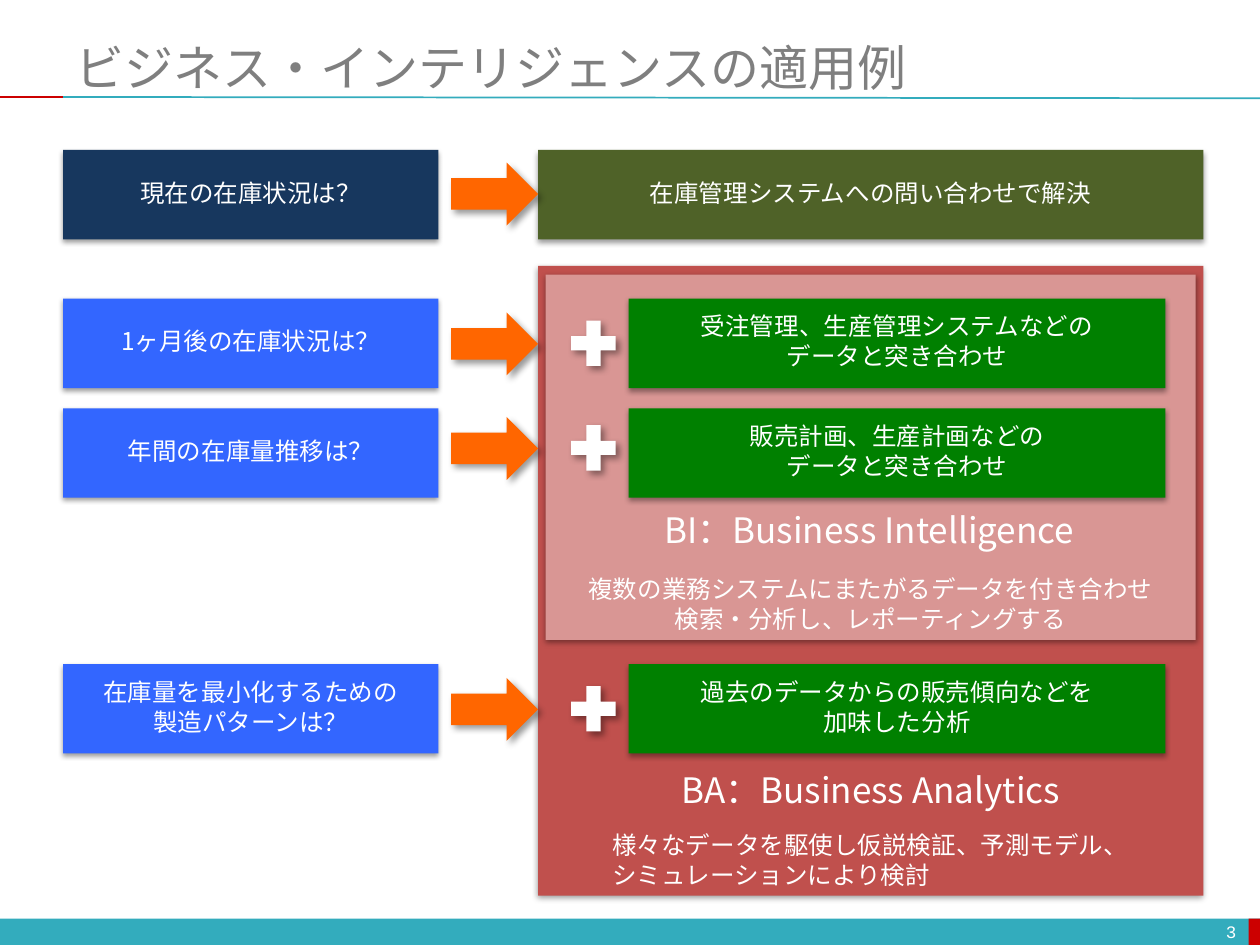
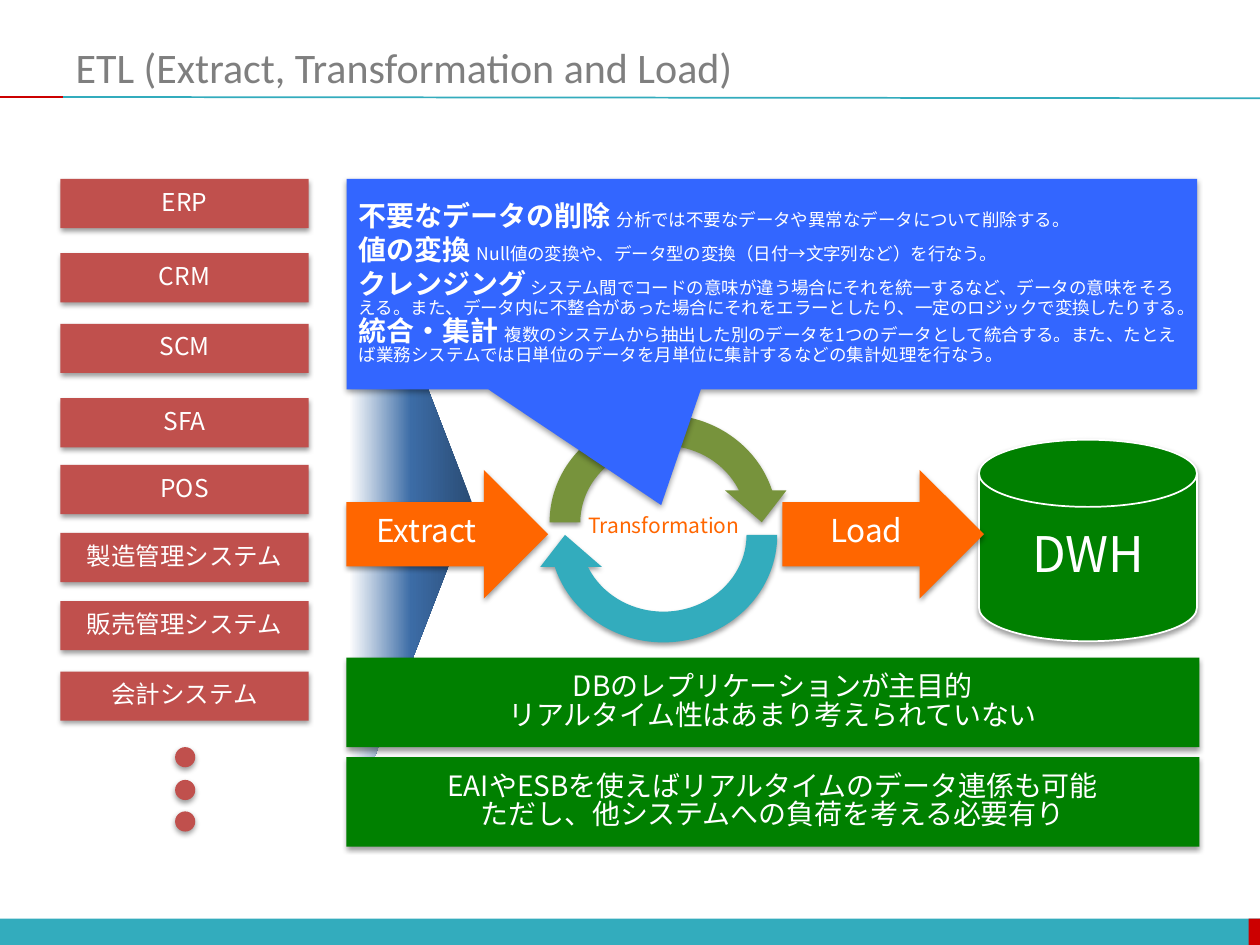
from copy import deepcopy
from dataclasses import dataclass
from lxml import etree
from pptx import Presentation
from pptx import util as u
from pptx.dml.color import RGBColor
from pptx.enum import shapes as s, text as t
from pptx.oxml.ns import qn


@dataclass(frozen=True)
class Theme:
    teal: str = "33ACBD"
    signal: str = "CC0000"
    title: str = "7F7F7F"
    white: str = "FFFFFF"
    navy: str = "17375E"
    blue: str = "3366FF"
    olive: str = "4F6228"
    moss: str = "77933C"
    green: str = "008000"
    red: str = "C0504D"
    pink: str = "D99694"
    orange: str = "FF6600"
    funnel: tuple = ("2A4C75", "3C6CA6", "FFFFFF")
    body_font: str = "Noto Sans CJK JP"
    title_font: str = "Calibri"
    number_font: str = "Courier New"
    number: int = 10
    detail: int = 10
    small: int = 12
    body: int = 14
    lead: int = 16
    step: int = 18
    term: int = 20
    large: int = 28
    soft: tuple = (38, 3.1, 1.6, 90)
    deep: tuple = (40, 4, 3, 45)


theme = Theme()
center, left, right = t.PP_ALIGN.CENTER, t.PP_ALIGN.LEFT, t.PP_ALIGN.RIGHT
middle, bottom, top = t.MSO_ANCHOR.MIDDLE, t.MSO_ANCHOR.BOTTOM, t.MSO_ANCHOR.TOP
shape = s.MSO_SHAPE


def write(frame, lines, size=theme.body, color=theme.white, font=theme.body_font,
          align=center, anchor=middle, gaps=None, wrap=True, spacing=0.85):
    frame.word_wrap = wrap
    frame.vertical_anchor = anchor
    for index, line in enumerate(lines):
        paragraph = frame.paragraphs[0] if index == 0 else frame.add_paragraph()
        gap = gaps[index] if gaps else 0.2 * size
        layout = {"alignment": align, "line_spacing": spacing,
                  "space_before": u.Pt(gap if index else 0)}
        for key, value in layout.items():
            setattr(paragraph, key, value)
        for words, look in [(line, {})] if isinstance(line, str) else line:
            run = paragraph.add_run()
            run.text = words
            for key, value in {"name": font, "size": u.Pt(size), **look}.items():
                setattr(run.font, key, value)
            run.font.color.rgb = RGBColor.from_string(color)
            east_asian = etree.SubElement(run.font._element, qn("a:ea"))
            east_asian.set("typeface", theme.body_font)


def draw(slide, kind, box, fill, lines=(), shadow=theme.soft, **look):
    part = slide.shapes.add_shape(kind, *map(u.Inches, box))
    part.fill.solid()
    part.fill.fore_color.rgb = RGBColor.from_string(fill)
    part.line.fill.background()
    part.shadow.inherit = False
    if shadow:
        alpha, blur, distance, angle = shadow
        effects = part._element.spPr.find(qn("a:effectLst"))
        outer = etree.SubElement(effects, qn("a:outerShdw"), blurRad=str(u.Pt(blur)),
                                 dist=str(u.Pt(distance)), dir=str(angle * 60000),
                                 rotWithShape="0")
        black = etree.SubElement(outer, qn("a:srgbClr"), val="000000")
        etree.SubElement(black, qn("a:alpha"), val=str(alpha * 1000))
    write(part.text_frame, lines, **look)
    return part


deck = Presentation()
deck.slide_width, deck.slide_height = u.Inches(10), u.Inches(7.5)

pages = []
for heading, heading_size in (("ビジネス・インテリジェンスの適用例", 28),
                              ("ETL (Extract, Transformation and Load)", 24)):
    page = deck.slides.add_slide(deck.slide_layouts[5])
    pages.append(page)
    for band_left, band_width, color in ((0, 10, theme.teal), (9.91, 0.09, theme.signal)):
        draw(page, shape.RECTANGLE, (band_left, 7.29, band_width, 0.21), color, shadow=None)
    for start, end, color in (((0.5, 0.77), (10, 0.78), theme.teal),
                              ((0, 0.77), (0.5, 0.77), theme.signal)):
        rule = page.shapes.add_connector(s.MSO_CONNECTOR.STRAIGHT,
                                         *map(u.Inches, start + end))
        rule.line.color.rgb = RGBColor.from_string(color)
        rule.line.width = u.Pt(1)
        etree.SubElement(rule._element.spPr, qn("a:effectLst"))
    title = page.shapes.title
    for key, value in {"left": 0.5, "top": 0.3, "width": 9.5, "height": 0.46}.items():
        setattr(title, key, u.Inches(value))
    write(title.text_frame, [heading], size=heading_size, color=theme.title,
          font=theme.title_font, align=left, spacing=1.0)

cases, etl = pages

draw(cases, shape.RECTANGLE, (4.27, 2.11, 5.28, 5), theme.red,
     ["様々なデータを駆使し仮説検証、予測モデル、", "シミュレーションにより検討"],
     align=left, anchor=bottom).text_frame.margin_left = u.Inches(0.59)
draw(cases, shape.RECTANGLE, (4.33, 2.18, 5.16, 2.9), theme.pink,
     ["複数の業務システムにまたがるデータを付き合わせ", "検索・分析し、レポーティングする"],
     anchor=bottom)

questions = (
    (1.19, 1.29, theme.navy, ["現在の在庫状況は？"], ["在庫管理システムへの問い合わせで解決"]),
    (2.37, 2.48, theme.blue, ["1ヶ月後の在庫状況は？"],
     ["受注管理、生産管理システムなどの", "データと突き合わせ"]),
    (3.24, 3.31, theme.blue, ["年間の在庫量推移は？"],
     ["販売計画、生産計画などの", "データと突き合わせ"]),
    (5.27, 5.38, theme.blue, ["在庫量を最小化するための", "製造パターンは？"],
     ["過去のデータからの販売傾向などを", "加味した分析"]),
)
for row, (row_top, arrow_top, color, question, answer) in enumerate(questions):
    draw(cases, shape.RECTANGLE, (0.5, row_top, 2.98, 0.71), color, question)
    if row == 0:
        draw(cases, shape.RECTANGLE, (4.27, row_top, 5.28, 0.71), theme.olive, answer)
    else:
        draw(cases, shape.RECTANGLE, (4.99, row_top, 4.26, 0.71), theme.green, answer)
        draw(cases, shape.MATH_PLUS, (4.47, arrow_top, 0.48, 0.49), theme.white,
             shadow=theme.deep)
    draw(cases, shape.RIGHT_ARROW, (3.58, arrow_top, 0.69, 0.5), theme.orange,
         shadow=theme.deep)

for box, term in (((4.32, 4.01, 5.16, 0.44), "BI：Business Intelligence"),
                  ((4.27, 6.07, 5.28, 0.44), "BA：Business Analytics")):
    label = cases.shapes.add_textbox(*map(u.Inches, box))
    write(label.text_frame, [term], size=theme.term)

page_number = cases.shapes.add_textbox(*map(u.Inches, (7.58, 7.27, 2.33, 0.24)))
write(page_number.text_frame, ["3"], size=theme.number, font=theme.number_font,
      align=right, spacing=1.0)

systems = {"ERP": 1.42, "CRM": 2.01, "SCM": 2.57, "SFA": 3.16, "POS": 3.69,
           "製造管理システム": 4.23, "販売管理システム": 4.77, "会計システム": 5.33}
for system, system_top in systems.items():
    draw(etl, shape.RECTANGLE, (0.48, system_top, 1.97, 0.39), theme.red, [system])
for dot_top in (5.93, 6.19, 6.44):
    draw(etl, shape.OVAL, (1.39, dot_top, 0.16, 0.16), theme.red)

funnel = draw(etl, shape.FLOWCHART_EXTRACT, (0.73, 3.51, 5.06, 0.98), theme.blue, shadow=None)
funnel.rotation = 90
funnel.fill.gradient()
funnel.fill.gradient_angle = 270
stop_list = funnel._element.spPr.find(".//" + qn("a:gsLst"))
stop_list.insert(1, deepcopy(stop_list[0]))
for stop, position, color in zip(funnel.fill.gradient_stops, (0, 0.5, 1), theme.funnel):
    stop.position = position
    stop.color.rgb = RGBColor.from_string(color)

warehouse = draw(etl, shape.FLOWCHART_MAGNETIC_DISK, (7.77, 3.49, 1.73, 1.6), theme.green,
                 ["DWH"], size=theme.large)
warehouse.line.color.rgb = RGBColor.from_string(theme.white)
warehouse.line.width = u.Pt(1)

for cycle_top, turn, color in ((3.17, 0, theme.moss), (3.27, 180, theme.teal)):
    draw(etl, shape.CIRCULAR_ARROW, (4.24, cycle_top, 2.05, 1.95), color).rotation = turn

for arrow_left in (2.75, 6.21):
    draw(etl, shape.RIGHT_ARROW, (arrow_left, 3.73, 1.6, 1.02), theme.orange)
for box, step, size, color in (
        ((2.85, 4.03, 1.07, 0.4), "Extract", theme.step, theme.white),
        ((4.55, 4.03, 1.44, 0.3), "Transformation", theme.small, theme.orange),
        ((6.48, 4.03, 0.79, 0.4), "Load", theme.step, theme.white)):
    label = etl.shapes.add_textbox(*map(u.Inches, box))
    write(label.text_frame, [step], size=size, color=color, wrap=False)

for note_top, note in (
        (5.22, ["DBのレプリケーションが主目的", "リアルタイム性はあまり考えられていない"]),
        (6.01, ["EAIやESBを使えばリアルタイムのデータ連係も可能",
                "ただし、他システムへの負荷を考える必要有り"])):
    draw(etl, shape.RECTANGLE, (2.75, note_top, 6.77, 0.71), theme.green, note,
         size=theme.lead, gaps=(0, 0))

tasks = (
    ("不要なデータの削除 ", "分析では不要なデータや異常なデータについて削除する。"),
    ("値の変換 ", "Null値の変換や、データ型の変換（日付→文字列など）を行なう。"),
    ("クレンジング", " システム間でコードの意味が違う場合にそれを統一するなど、データの意味をそろえる。"
     "また、データ内に不整合があった場合にそれをエラーとしたり、一定のロジックで変換したりする。"),
    ("統合・集計 ", "複数のシステムから抽出した別のデータを1つのデータとして統合する。"
     "また、たとえば業務システムでは日単位のデータを月単位に集計するなどの集計処理を行なう。"),
)
callout = draw(etl, shape.RECTANGULAR_CALLOUT, (2.75, 1.42, 6.75, 1.67), theme.blue,
               [[(task, {"bold": True}), (detail, {"size": u.Pt(theme.detail)})]
                for task, detail in tasks],
               size=theme.lead, align=left, gaps=(0, 3.2, 3.2, 0))
callout.adjustments[0] = -0.13
callout.adjustments[1] = 1.05

deck.save("out.pptx")
